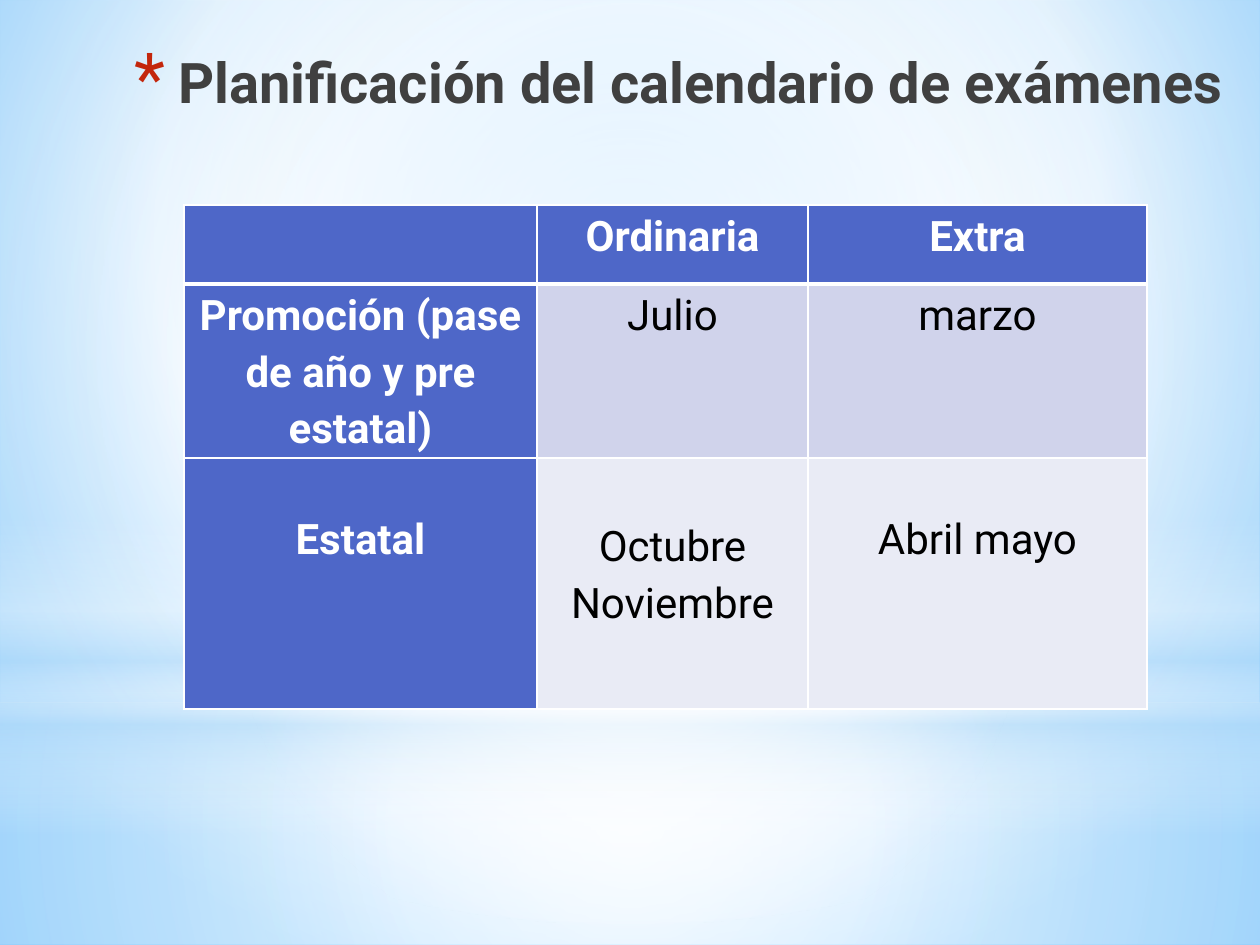
from lxml.etree import SubElement
from pptx import Presentation
from pptx.dml.color import RGBColor
from pptx.enum.shapes import MSO_SHAPE as Shape
from pptx.enum.text import MSO_ANCHOR as Anchor, PP_ALIGN as Align
from pptx.oxml.ns import qn
from pptx.util import Emu, Pt

WHITE = RGBColor(0xFF, 0xFF, 0xFF)
BLACK = RGBColor(0x00, 0x00, 0x00)
CHARCOAL = RGBColor(0x40, 0x40, 0x40)
RED = RGBColor(0xC3, 0x26, 0x0C)
INDIGO = RGBColor(0x4E, 0x67, 0xC8)
LILAC = RGBColor(0xD0, 0xD3, 0xEB)
PALE_LILAC = RGBColor(0xE9, 0xEB, 0xF5)
LIGHT_SKY = RGBColor(0x9E, 0xD5, 0xFF)
DEEP_SKY = RGBColor(0x5B, 0xB9, 0xFF)
HAZE = RGBColor(0xB4, 0xDC, 0xFA)

FONT = "Roboto"
TITLE = "Planificación del calendario de exámenes"
ROWS = [
    ["", "Ordinaria", "Extra"],
    ["Promoción (pase de año y pre estatal)", "Julio", "marzo"],
    ["Estatal", "Octubre Noviembre", "Abril mayo"],
]
TEXT_DROPS = [[0, 0, 0], [0, 0, 0], [50, 57, 50]]
BODY_FILLS = [INDIGO, LILAC, PALE_LILAC]
COLUMN_WIDTHS = [353, 271, 339]
ROW_HEIGHTS = [79, 171, 251]
TABLE_LEFT, TABLE_TOP = 184, 205

CENTER = (50, 50, 50, 50)
SKY = [(0, LIGHT_SKY, 100), (60, WHITE, 100), (100, DEEP_SKY, 100)]
GLOWS = [
    (Shape.RECTANGLE, (0, 703, 1260, 242),
     [(0, WHITE, 91), (37, WHITE, 76), (100, HAZE, 79)], CENTER),
    (Shape.RECTANGLE, (0, 0, 1260, 703),
     [(0, WHITE, 89), (48, WHITE, 62), (100, HAZE, 79)], CENTER),
    (Shape.RECTANGLE, (0, 519, 1260, 315),
     [(0, WHITE, 0), (29, WHITE, 30), (45, HAZE, 40),
      (55, WHITE, 26), (65, HAZE, 60), (100, WHITE, 0)], None),
    (Shape.OVAL, (0, 221, 1260, 703),
     [(0, WHITE, 100), (56, WHITE, 0)], CENTER),
]


def px(value):
    return Emu(round(value * 914400 / 126))


def add(parent, tag, **attributes):
    return SubElement(parent, qn(tag), {k: str(v) for k, v in attributes.items()})


def set_gradient(fill, element, stops, focus):
    fill.gradient()
    gradient = element.find(".//" + qn("a:gradFill"))
    for child in list(gradient):
        gradient.remove(child)
    stop_list = add(gradient, "a:gsLst")
    for position, color, opacity in stops:
        stop = add(stop_list, "a:gs", pos=position * 1000)
        add(add(stop, "a:srgbClr", val=color), "a:alpha", val=opacity * 1000)
    if focus:
        sides = {side: share * 1000 for side, share in zip("ltrb", focus)}
        add(add(gradient, "a:path", path="circle"), "a:fillToRect", **sides)
    else:
        add(gradient, "a:lin", ang=90 * 60000, scaled=0)


def apply(target, formats):
    for name, value in formats.items():
        setattr(target, name, value)


def write(paragraph, text, size, color, bold):
    run = paragraph.add_run()
    run.text = text
    apply(run.font, {"name": FONT, "size": Pt(size), "bold": bold})
    run.font.color.rgb = color


def add_glow(slide, kind, box, stops, focus):
    shape = slide.shapes.add_shape(kind, *map(px, box))
    shape.shadow.inherit = False
    shape.line.fill.background()
    set_gradient(shape.fill, shape.element, stops, focus)


def add_title(slide):
    frame = slide.shapes.add_textbox(*map(px, (35, 36, 1201, 158))).text_frame
    apply(frame, {"word_wrap": True, "vertical_anchor": Anchor.TOP,
                  "margin_top": px(11), "margin_left": px(12), "margin_right": px(12)})
    paragraph = frame.paragraphs[0]
    paragraph.alignment = Align.RIGHT
    write(paragraph, TITLE, 32, CHARCOAL, True)
    properties = paragraph._p.get_or_add_pPr()
    properties.set("marL", str(px(44)))
    properties.set("indent", str(px(-44)))
    add(add(properties, "a:buClr"), "a:srgbClr", val=RED)
    add(properties, "a:buSzPct", val=128000)
    add(properties, "a:buFont", typeface=FONT)
    add(properties, "a:buChar", char="*")


def add_borders(cell, widths):
    properties = cell._tc.get_or_add_tcPr()
    for side, width in zip("LRTB", widths):
        line = add(properties, f"a:ln{side}", w=Pt(width))
        add(add(line, "a:solidFill"), "a:srgbClr", val=WHITE)


def add_calendar(slide):
    table = slide.shapes.add_table(
        len(ROWS), len(COLUMN_WIDTHS), px(TABLE_LEFT), px(TABLE_TOP),
        px(sum(COLUMN_WIDTHS)), px(sum(ROW_HEIGHTS))).table
    table.horz_banding = False
    for column, width in zip(table.columns, COLUMN_WIDTHS):
        column.width = px(width)
    for r, (row, height) in enumerate(zip(table.rows, ROW_HEIGHTS)):
        row.height = px(height)
        for c, cell in enumerate(row.cells):
            heading = r == 0 or c == 0
            add_borders(cell, (1, 1, 3 if r == 1 else 1, 3 if r == 0 else 1))
            cell.fill.solid()
            cell.fill.fore_color.rgb = INDIGO if heading else BODY_FILLS[r]
            apply(cell, {"margin_left": px(9), "margin_right": px(9),
                         "margin_top": px(TEXT_DROPS[r][c]), "margin_bottom": 0})
            paragraph = cell.text_frame.paragraphs[0]
            apply(paragraph, {"alignment": Align.CENTER, "line_spacing": 1.15})
            if ROWS[r][c]:
                write(paragraph, ROWS[r][c], 24, WHITE if heading else BLACK, heading)


def main():
    presentation = Presentation()
    apply(presentation, {"slide_width": px(1260), "slide_height": px(945)})
    slide = presentation.slides.add_slide(presentation.slide_layouts[6])
    set_gradient(slide.background.fill, slide.element, SKY, (20, 10, 20, 60))
    for glow in GLOWS:
        add_glow(slide, *glow)
    add_title(slide)
    add_calendar(slide)
    presentation.save("out.pptx")


if __name__ == "__main__":
    main()
